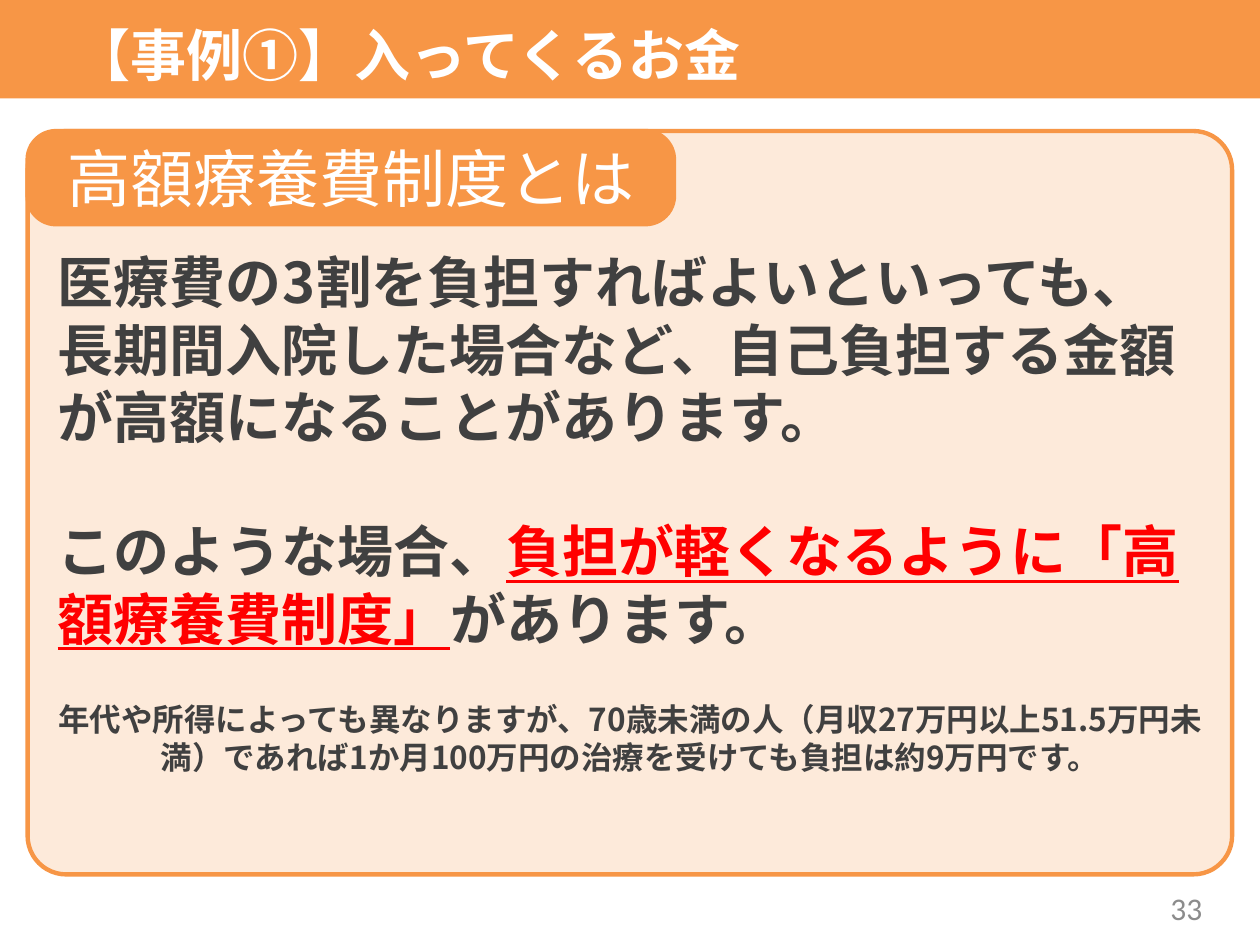
from dataclasses import dataclass
from typing import Optional

from lxml import etree
from pptx import Presentation
from pptx.dml.color import RGBColor
from pptx.enum import shapes, text
from pptx.oxml.ns import qn
from pptx.util import Pt

COLORS = {
    "orange": "F79646",
    "cream": "FDEADA",
    "white": "FFFFFF",
    "ink": "404040",
    "red": "FF0000",
    "gray": "8C8C8C",
}
JAPANESE = "Noto Sans CJK JP"
LEFT, CENTER, RIGHT = text.PP_ALIGN.LEFT, text.PP_ALIGN.CENTER, text.PP_ALIGN.RIGHT
TOP, MIDDLE = text.MSO_ANCHOR.TOP, text.MSO_ANCHOR.MIDDLE


@dataclass
class Box:
    left: float
    top: float
    width: float
    height: float

    def lengths(self):
        return [Pt(v) for v in (self.left, self.top, self.width, self.height)]


@dataclass
class Run:
    words: str
    color: Optional[str] = None
    underline: Optional[bool] = None


@dataclass
class Style:
    size: float
    color: str
    bold: bool = False
    align: text.PP_ALIGN = LEFT
    anchor: text.MSO_ANCHOR = TOP
    font: str = JAPANESE
    line: Optional[float] = None  # exact line pitch
    gap: float = 0  # space between paragraphs


def rgb(name: str) -> RGBColor:
    return RGBColor.from_string(COLORS[name])


def add_panel(slide, box: Box, fill: str, corner: float = 0, outline: Optional[str] = None):
    kind = shapes.MSO_SHAPE.ROUNDED_RECTANGLE if corner else shapes.MSO_SHAPE.RECTANGLE
    panel = slide.shapes.add_shape(kind, *box.lengths())
    panel.shadow.inherit = False
    if corner:
        panel.adjustments[0] = corner
    panel.fill.solid()
    panel.fill.fore_color.rgb = rgb(fill)
    if outline:
        panel.line.color.rgb = rgb(outline)
        panel.line.width = Pt(2.5)
    else:
        panel.line.fill.background()
    return panel


def write(frame, paragraphs: list[list[Run]], style: Style) -> None:
    frame.word_wrap = True
    frame.vertical_anchor = style.anchor
    for index, runs in enumerate(paragraphs):
        paragraph = frame.add_paragraph() if index else frame.paragraphs[0]
        paragraph.alignment = style.align
        if style.line:
            paragraph.line_spacing = Pt(style.line)
        if index:
            paragraph.space_before = Pt(style.gap)
        font = paragraph.font
        font.size, font.bold, font.name = Pt(style.size), style.bold, style.font
        font.color.rgb = rgb(style.color)
        for part in runs:
            run = paragraph.add_run()
            run.text = part.words
            if part.color:
                run.font.color.rgb = rgb(part.color)
            if part.underline:
                run.font.underline = True
            # East Asian glyphs take their own typeface
            properties = run.font._element
            etree.SubElement(properties, qn("a:ea")).set("typeface", style.font)


def add_text(slide, box: Box, paragraphs: list[list[Run]], style: Style) -> None:
    write(slide.shapes.add_textbox(*box.lengths()).text_frame, paragraphs, style)


def main() -> None:
    deck = Presentation()
    deck.slide_width, deck.slide_height = Pt(720), Pt(540)
    slide = deck.slides.add_slide(deck.slide_layouts[6])

    # Title band
    add_panel(slide, Box(0, 0, 720, 56.2), "orange")
    add_text(slide, Box(35.3, 2.2, 635.8, 56.9), [[Run("【事例①】入ってくるお金")]],
             Style(32, "white", bold=True, anchor=MIDDLE))

    # Card with its heading tab
    add_panel(slide, Box(15.8, 74.9, 688.3, 424.8), "cream", 0.052, "orange")
    heading = add_panel(slide, Box(15.8, 74.9, 369.4, 53.3), "orange", 0.307, "orange")
    write(heading.text_frame, [[Run("高額療養費制度とは")]],
          Style(36, "white", align=CENTER, anchor=MIDDLE))

    # Explanation
    explanation = [
        [Run("医療費の3割を負担すればよいといっても、長期間入院した場合など、"
             "自己負担する金額が高額になることがあります。")],
        [Run("このような場合、"),
         Run("負担が軽くなるように「高額療養費制度」", "red", True),
         Run("があります。")],
    ]
    add_text(slide, Box(25.9, 138.2, 668.2, 239.8), explanation,
             Style(32, "ink", bold=True, line=38.4, gap=38.4))

    # Worked example
    example = ("年代や所得によっても異なりますが、70歳未満の人（月収27万円以上51.5万円未満）"
               "であれば1か月100万円の治療を受けても負担は約9万円です。")
    add_text(slide, Box(20.9, 396.7, 678.2, 51.1), [[Run(example)]],
             Style(18, "ink", bold=True, align=CENTER, line=21.6))

    # Page number
    add_text(slide, Box(526.3, 504.7, 167.8, 28.8), [[Run("33")]],
             Style(18, "gray", align=RIGHT, anchor=MIDDLE, font="Calibri"))

    deck.save("out.pptx")


if __name__ == "__main__":
    main()
